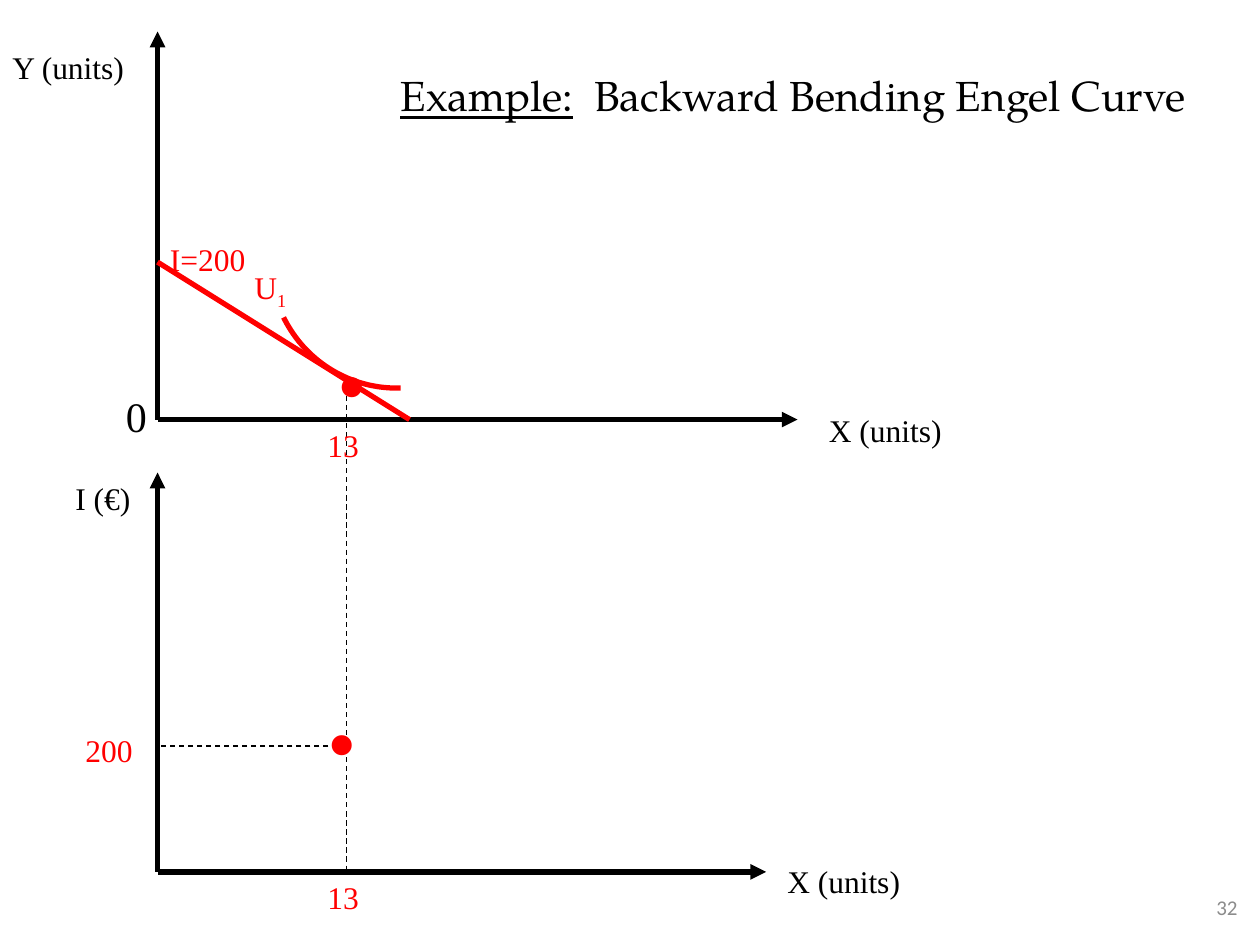
import math
from dataclasses import dataclass

from lxml import etree
from pptx import Presentation
from pptx import util as u
from pptx.dml.color import RGBColor
from pptx.enum import dml, shapes, text
from pptx.oxml import ns

COLORS = {"black": "000000", "red": "FF0000", "grey": "8C8C8C"}
SERIF = "Times New Roman"
ORIGIN_X = 1.25
TOP_AXIS_Y, BOTTOM_AXIS_Y = 3.33, 6.92
OPTIMUM_X, INCOME_Y = 2.75, 5.92


@dataclass
class Line:
    start: tuple[float, float]
    end: tuple[float, float]
    color: str = "black"
    width: float = 3
    arrow: bool = False
    dashed: bool = False


@dataclass
class Run:
    text: str
    underline: bool = False
    subscript: bool = False


@dataclass
class Label:
    runs: list[Run]
    left: float
    top: float
    width: float
    height: float = 0.4
    size: float = 18
    color: str = "black"
    font: str = SERIF
    wrap: bool = False
    align: text.PP_ALIGN = text.PP_ALIGN.LEFT
    anchor: text.MSO_ANCHOR = text.MSO_ANCHOR.TOP


def rgb(name: str) -> RGBColor:
    return RGBColor.from_string(COLORS[name])


def draw_line(slide, line: Line) -> None:
    points = [u.Inches(value) for value in (*line.start, *line.end)]
    connector = slide.shapes.add_connector(shapes.MSO_CONNECTOR.STRAIGHT, *points)
    connector.line.color.rgb = rgb(line.color)
    connector.line.width = u.Pt(line.width)
    if line.dashed:
        connector.line.dash_style = dml.MSO_LINE.DASH
    if line.arrow:
        outline = connector.line._get_or_add_ln()
        etree.SubElement(outline, ns.qn("a:tailEnd"), type="triangle")
    etree.SubElement(connector._element.spPr, ns.qn("a:effectLst"))


def draw_label(slide, label: Label) -> None:
    box = slide.shapes.add_textbox(
        u.Inches(label.left), u.Inches(label.top),
        u.Inches(label.width), u.Inches(label.height),
    )
    frame = box.text_frame
    frame.word_wrap = label.wrap
    frame.vertical_anchor = label.anchor
    paragraph = frame.paragraphs[0]
    paragraph.alignment = label.align
    for part in label.runs:
        run = paragraph.add_run()
        run.text = part.text
        run.font.name = label.font
        run.font.size = u.Pt(label.size)
        run.font.color.rgb = rgb(label.color)
        if part.underline:
            run.font.underline = True
        if part.subscript:
            run._r.get_or_add_rPr().set("baseline", "-25000")


def draw_indifference_curve(slide) -> None:
    """Draw a circular arc of one inch radius, open at both ends."""
    center_x, center_y, radius, steps = 3.15, 2.08, 1, 40
    first, last = math.radians(88.3), math.radians(154)
    angles = [first + (last - first) * step / steps for step in range(steps + 1)]
    points = [
        (u.Inches(center_x + radius * math.cos(angle)),
         u.Inches(center_y + radius * math.sin(angle)))
        for angle in angles
    ]
    builder = slide.shapes.build_freeform(*points[0])
    builder.add_line_segments(points[1:], close=False)
    curve = builder.convert_to_shape()
    curve.shadow.inherit = False
    curve.fill.background()
    curve.line.color.rgb = rgb("red")
    curve.line.width = u.Pt(3)


LINES = [
    Line((ORIGIN_X, TOP_AXIS_Y), (6.33, TOP_AXIS_Y), arrow=True),
    Line((ORIGIN_X, TOP_AXIS_Y), (ORIGIN_X, 0.25), arrow=True),
    Line((ORIGIN_X, BOTTOM_AXIS_Y), (ORIGIN_X, 3.75), arrow=True),
    Line((ORIGIN_X, BOTTOM_AXIS_Y), (6.08, BOTTOM_AXIS_Y), arrow=True),
    Line((ORIGIN_X, 2.08), (3.25, TOP_AXIS_Y), color="red"),
    Line((OPTIMUM_X, 3), (OPTIMUM_X, BOTTOM_AXIS_Y), width=0.75, dashed=True),
    Line((OPTIMUM_X, INCOME_Y), (ORIGIN_X, INCOME_Y), width=0.75, dashed=True),
]

LABELS = [
    Label([Run("32")], 9.17, 7, 0.75, size=12, color="grey", font="Calibri",
          wrap=True, align=text.PP_ALIGN.RIGHT, anchor=text.MSO_ANCHOR.MIDDLE),
    Label([Run("X (units)")], 6.48, 3.21, 1.14),
    Label([Run("Y (units)")], 0, 0.33, 1.14),
    Label([Run("0")], 0.9, 3.05, 0.37, 0.5, size=24),
    Label([Run("I (€)")], 0.5, 3.75, 0.65),
    Label([Run("X (units)")], 6.15, 6.79, 1.14),
    Label([Run("U"), Run("1", subscript=True)], 1.92, 2.08, 0.47, color="red"),
    Label([Run("I=200")], 1.25, 1.86, 0.82, color="red"),
    Label([Run("200")], 0.58, 5.75, 0.58, color="red"),
    Label([Run("Example:", underline=True), Run("  Backward Bending Engel Curve")],
          3.08, 0.5, 6.75, 0.5, size=24, font="TeX Gyre Pagella", wrap=True),
    Label([Run("•")], 2.58, 2.58, 0.43, 0.9, size=48, color="red"),
    Label([Run("•")], 2.5, 5.42, 0.43, 0.9, size=48, color="red"),
    Label([Run("13")], 2.5, TOP_AXIS_Y, 0.45, color="red"),
    Label([Run("13")], 2.5, BOTTOM_AXIS_Y, 0.45, color="red"),
]


def main() -> None:
    presentation = Presentation()
    presentation.slide_width = u.Inches(10)
    presentation.slide_height = u.Inches(7.5)
    slide = presentation.slides.add_slide(presentation.slide_layouts[6])
    for line in LINES:
        draw_line(slide, line)
    draw_indifference_curve(slide)
    for label in LABELS:
        draw_label(slide, label)
    presentation.save("out.pptx")


if __name__ == "__main__":
    main()
